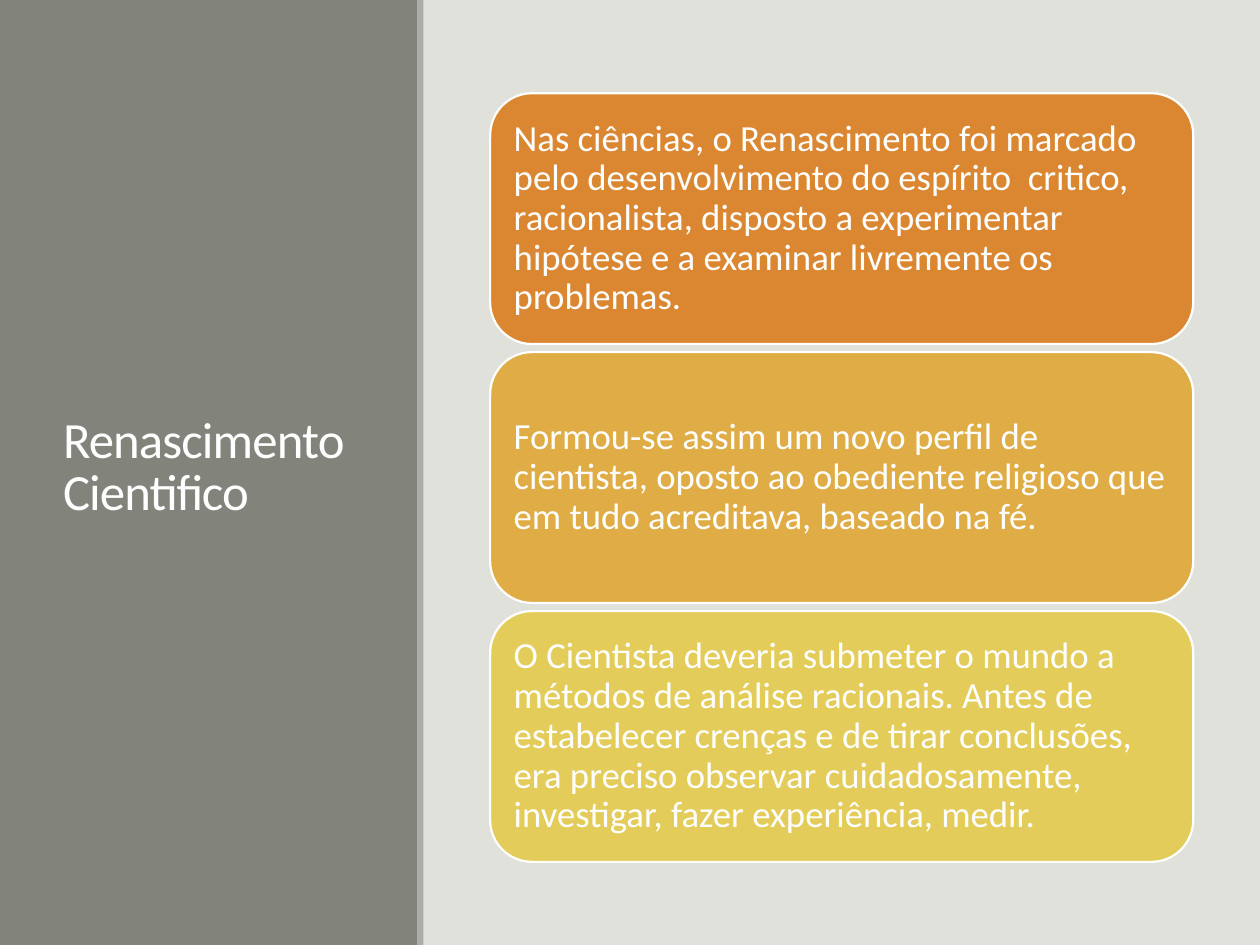
from dataclasses import dataclass

import pptx
import pptx.dml.color
import pptx.enum.shapes
import pptx.enum.text
import pptx.util
from pptx.util import Inches

SHAPES = pptx.enum.shapes.MSO_SHAPE


@dataclass(frozen=True)
class Theme:
    font: str = "Calibri"
    title_size: float = 29
    body_size: float = 21
    background: str = "E1E1DB"
    panel: str = "82847C"
    stripe: str = "ACADA8"
    white: str = "FFFFFF"
    cards: tuple = ("DB8631", "DFAC45", "E3CC5A")


THEME = Theme()

STATEMENTS = (
    "Nas ciências, o Renascimento foi marcado pelo desenvolvimento do espírito  critico, "
    "racionalista, disposto a experimentar hipótese e a examinar livremente os problemas.",
    "Formou-se assim um novo perfil de cientista, oposto ao obediente religioso que em tudo "
    "acreditava, baseado na fé.",
    "O Cientista deveria submeter o mundo a métodos de análise racionais. Antes de estabelecer "
    "crenças e de tirar conclusões, era preciso observar cuidadosamente, investigar, fazer "
    "experiência, medir.",
)
CARD_LEFT, CARD_TOP, CARD_WIDTH, CARD_HEIGHT = 3.89, 0.74, 5.58, 1.99
CARD_PITCH = 2.055


def rgb(code):
    return pptx.dml.color.RGBColor.from_string(code)


def write_text(shape, text, *, size, line_spacing, inset=0.1, tracking=None):
    """Fill a shape with one left-aligned, vertically centred paragraph."""
    frame = shape.text_frame
    frame.word_wrap = True
    frame.auto_size = pptx.enum.text.MSO_AUTO_SIZE.NONE
    frame.vertical_anchor = pptx.enum.text.MSO_ANCHOR.MIDDLE
    frame.margin_left = frame.margin_right = Inches(inset)
    frame.margin_top = frame.margin_bottom = Inches(inset)
    para = frame.paragraphs[0]
    para.alignment = pptx.enum.text.PP_ALIGN.LEFT
    para.line_spacing = line_spacing
    span = para.add_run()
    span.text = text
    span.font.name = THEME.font
    span.font.size = pptx.util.Pt(size)
    span.font.color.rgb = rgb(THEME.white)
    if tracking is not None:
        span.font._element.set("spc", str(int(tracking * 100)))


def add_block(page, kind, left, top, width, height, fill, line=None):
    block = page.shapes.add_shape(
        kind, Inches(left), Inches(top), Inches(width), Inches(height)
    )
    block.shadow.inherit = False
    block.fill.solid()
    block.fill.fore_color.rgb = rgb(fill)
    if line:
        block.line.color.rgb = rgb(line)
        block.line.width = pptx.util.Pt(1.25)
    else:
        block.line.fill.background()
    return block


def add_title_panel(page, text):
    panel = add_block(page, SHAPES.RECTANGLE, 0, 0, 3.32, 7.5, THEME.panel)
    add_block(page, SHAPES.RECTANGLE, 3.31, 0, 0.05, 7.5, THEME.stripe)
    title = page.shapes.title
    title.left, title.top = Inches(0.4), Inches(0.57)
    title.width, title.height = Inches(2.53), Inches(6.31)
    write_text(title, text, size=THEME.title_size, line_spacing=0.85, tracking=-0.5)
    title.element.addprevious(panel.element)


def add_cards(page, statements):
    for row, (statement, color) in enumerate(zip(statements, THEME.cards)):
        card = add_block(
            page, SHAPES.ROUNDED_RECTANGLE, CARD_LEFT, CARD_TOP + row * CARD_PITCH,
            CARD_WIDTH, CARD_HEIGHT, color, line=THEME.white,
        )
        write_text(card, statement, size=THEME.body_size, line_spacing=0.9, inset=0.09)


def main():
    deck = pptx.Presentation()
    deck.slide_width, deck.slide_height = Inches(10), Inches(7.5)
    page = deck.slides.add_slide(deck.slide_layouts.get_by_name("Title Only"))
    page.background.fill.solid()
    page.background.fill.fore_color.rgb = rgb(THEME.background)
    add_title_panel(page, "Renascimento Cientifico")
    add_cards(page, STATEMENTS)
    deck.save("out.pptx")


if __name__ == "__main__":
    main()
